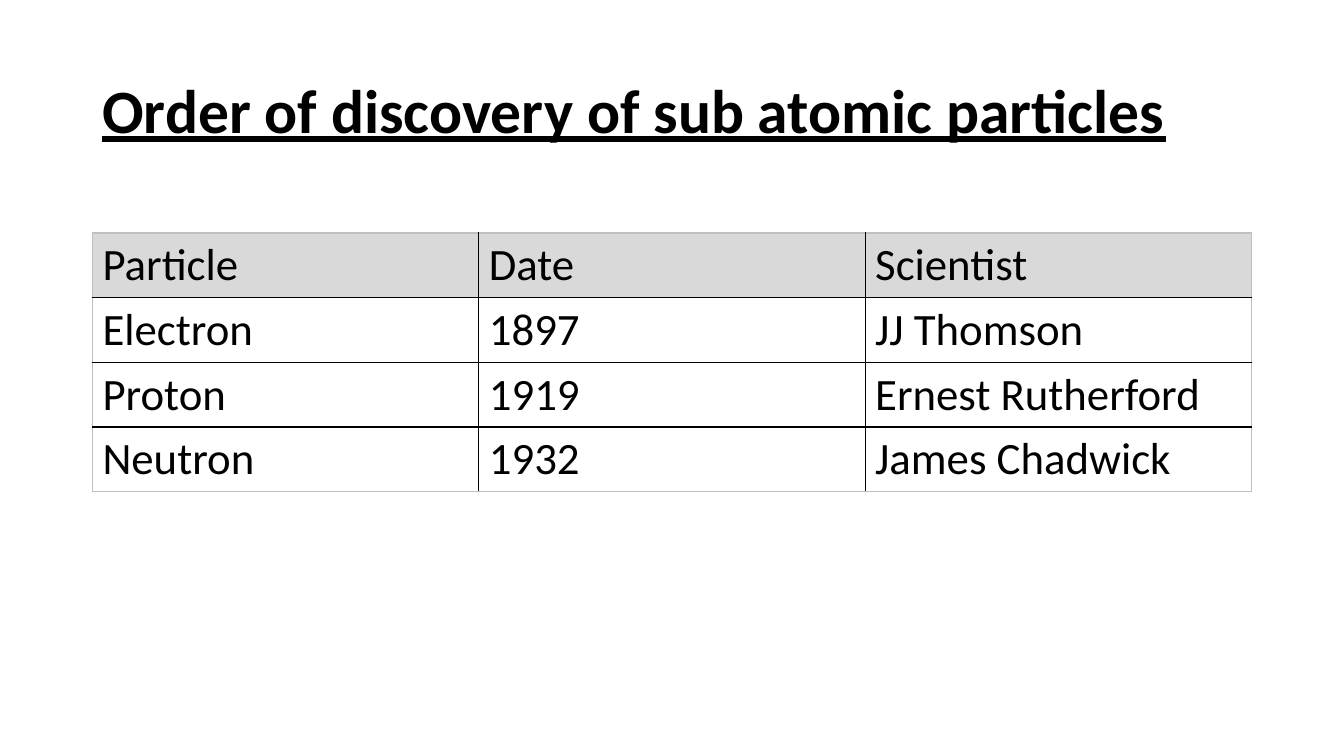
from pptx import Presentation
from pptx.util import Cm, Pt
from pptx.dml.color import RGBColor
from pptx.enum.text import MSO_ANCHOR
from lxml import etree

MIDDLE = MSO_ANCHOR.MIDDLE
FONT = "Calibri"
COLOURS = {"text": "000000", "header": "D9D9D9", "inner": "000000", "outer": "BFBFBF"}
NS = "http://schemas.openxmlformats.org/drawingml/2006/main"

# Content
TITLE = "Order of discovery of sub atomic particles"
DISCOVERIES = [
    ("Particle", "Date", "Scientist"),
    ("Electron", "1897", "JJ Thomson"),
    ("Proton", "1919", "Ernest Rutherford"),
    ("Neutron", "1932", "James Chadwick"),
]

# Layout
LEFT, WIDTH = 2.33, 29.21
TITLE_TOP, TITLE_HEIGHT = 1.01, 3.68
TABLE_TOP, ROW_HEIGHT = 5.87, 1.63


def add_run(p, text, size, bold=False, underline=False):
    r = p.add_run()
    r.text = text
    r.font.name = FONT
    r.font.size = Pt(size)
    r.font.bold = bold
    r.font.underline = underline
    r.font.color.rgb = RGBColor.from_string(COLOURS["text"])


def add_border(tcPr, side, colour):
    ln = etree.SubElement(tcPr, f"{{{NS}}}{side}", w=str(Pt(1)))
    fill = etree.SubElement(ln, f"{{{NS}}}solidFill")
    etree.SubElement(fill, f"{{{NS}}}srgbClr", val=colour)


prs = Presentation()
prs.slide_width, prs.slide_height = Cm(33.87), Cm(19.05)
s = prs.slides.add_slide(prs.slide_layouts[6])

# Title
tf = s.shapes.add_textbox(Cm(LEFT), Cm(TITLE_TOP), Cm(WIDTH), Cm(TITLE_HEIGHT)).text_frame
tf.word_wrap = True
tf.vertical_anchor = MIDDLE
p = tf.paragraphs[0]
p.line_spacing = 0.9
add_run(p, TITLE, 44, bold=True, underline=True)

# Table of discoveries
n_rows, n_cols = len(DISCOVERIES), len(DISCOVERIES[0])
table = s.shapes.add_table(n_rows, n_cols, Cm(LEFT), Cm(TABLE_TOP),
                           Cm(WIDTH), Cm(ROW_HEIGHT * n_rows)).table
table.first_row = False
table.horz_banding = False

for i, row in enumerate(DISCOVERIES):
    for j, text in enumerate(row):
        cell = table.cell(i, j)
        add_run(cell.text_frame.paragraphs[0], text, 32)

        # Borders come before the fill in the cell properties
        tcPr = cell._tc.get_or_add_tcPr()
        edges = {"lnL": j == 0, "lnR": j == n_cols - 1,
                 "lnT": i == 0, "lnB": i == n_rows - 1}
        for side, is_outer in edges.items():
            add_border(tcPr, side, COLOURS["outer" if is_outer else "inner"])

        if i == 0:
            cell.fill.solid()
            cell.fill.fore_color.rgb = RGBColor.from_string(COLOURS["header"])
        else:
            cell.fill.background()

prs.save("out.pptx")
